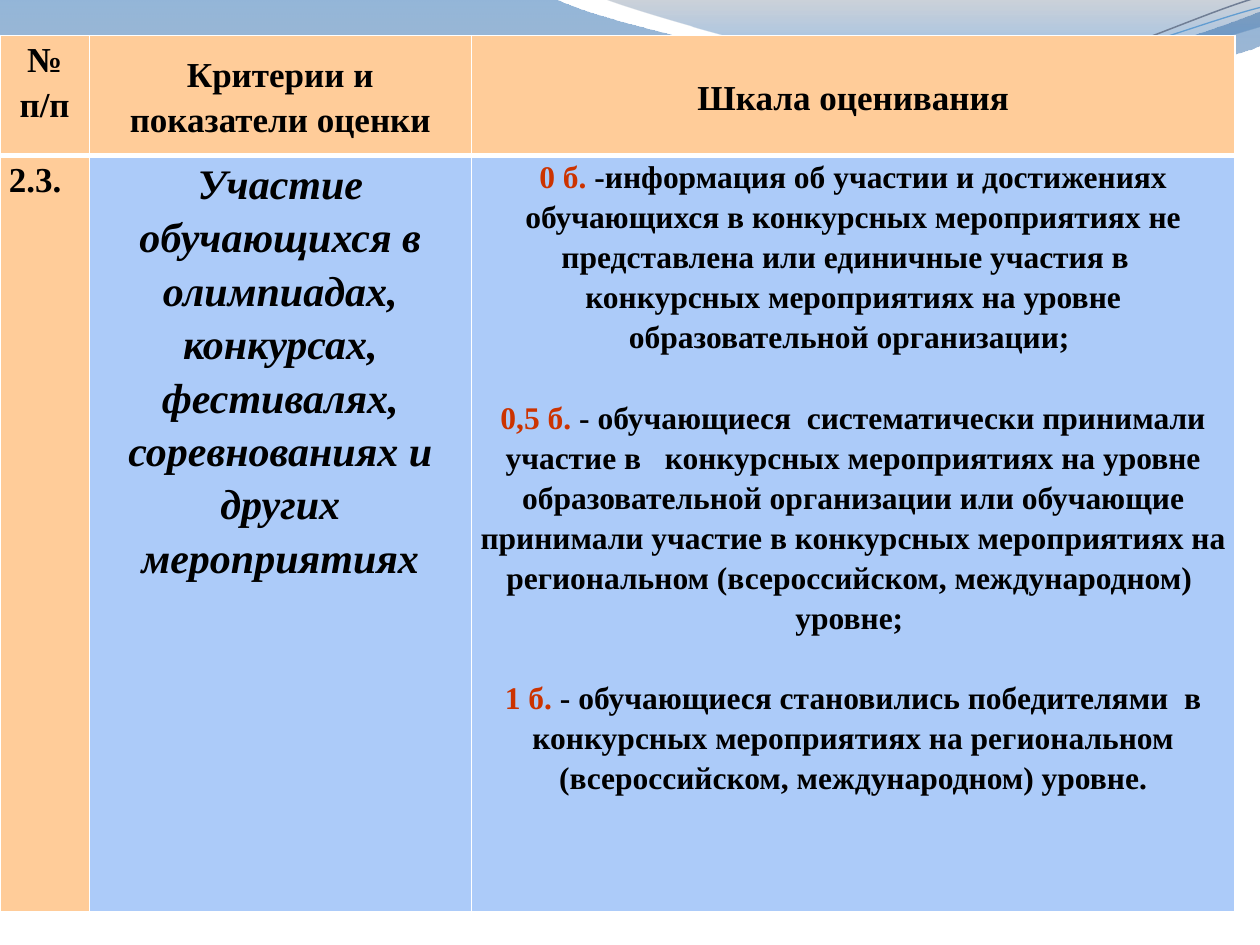
from math import cos, radians, sin

from lxml.etree import SubElement as Sub
from pptx import Presentation
from pptx.dml.color import RGBColor as Rgb
from pptx.enum.text import MSO_ANCHOR as Anchor, PP_ALIGN as Align
from pptx.oxml.ns import qn
from pptx.util import Cm, Pt

COLORS = {
    "white": "FFFFFF", "black": "000000", "red": "CC3300",
    "peach": "FFCC99", "sky": "ACCBF9",
    "navy": "125EAA", "steel": "697FA4", "slate": "596982",
    "azure": "0670DA", "gray": "707E95", "blue": "629DD1",
}
FONT = "Times New Roman"
UNIT = 1000  # path steps per inch
TILT = 357.3


def turn(dots, mid, angle):
    c, s = cos(radians(angle)), sin(radians(angle))
    return [(mid[0] + (x - mid[0]) * c - (y - mid[1]) * s,
             mid[1] + (x - mid[0]) * s + (y - mid[1]) * c) for x, y in dots]


class Deck:
    def __init__(self):
        self.show = Presentation()
        self.show.slide_width, self.show.slide_height = Cm(25.4), Cm(19.05)
        self.slide = self.show.slides.add_slide(self.show.slide_layouts[6])

    def color(self, name):
        return Rgb.from_string(COLORS[name])

    def outline(self, parts, close):
        """Each part is a list of points: one for a line, three for a curve."""
        dots = [(x * UNIT, y * UNIT) for part in parts for x, y in part]
        pen = self.slide.shapes.build_freeform(*dots[0], scale=Cm(2.54) / UNIT)
        pen.add_line_segments(dots[1:], close=close)
        shape = pen.convert_to_shape()
        shape.shadow.inherit = False
        # Join the lines of each curve into one cubic segment
        lines = shape._element.spPr.iter(qn("a:lnTo"))
        lines = iter(list(lines))
        for part in parts[1:]:
            group = [next(lines) for _ in part]
            if len(group) == 3:
                group[0].tag = qn("a:cubicBezTo")
                for line in group[1:]:
                    group[0].append(line[0])
                    line.getparent().remove(line)
        return shape

    def wave(self, parts, stops):
        shape = self.outline(parts, True)
        shape.line.fill.background()
        shape.fill.gradient()
        shape.fill.gradient_angle = 270
        for stop, (pos, name, alpha) in zip(shape.fill.gradient_stops, stops):
            stop.position = pos
            stop.color.rgb = self.color(name)
        marks = shape._element.spPr.iter(qn("a:srgbClr"))
        for mark, (_, _, alpha) in zip(marks, stops):
            Sub(mark, qn("a:alpha"), val=str(alpha * 1000))

    def curve(self, parts, mid, name, width):
        shape = self.outline([turn(part, mid, 360 - TILT) for part in parts], False)
        shape.rotation = TILT
        shape.fill.background()
        shape.line.color.rgb = self.color(name)
        shape.line.width = Pt(width)

    def table(self, left, top, cols, rows):
        frame = self.slide.shapes.add_table(
            len(rows), len(cols), Cm(left), Cm(top), Cm(sum(cols)), Cm(sum(rows)))
        grid = frame.table
        for col, width in zip(grid.columns, cols):
            col.width = Cm(width)
        for row, height in zip(grid.rows, rows):
            row.height = Cm(height)
        return grid

    def cell(self, cell, paras, fill, edges, size=20, align=Align.CENTER,
             anchor=Anchor.TOP, italic=False, gap=0):
        """Each paragraph is a list of (text, color) runs."""
        cell.margin_left = cell.margin_right = Cm(0.18)
        cell.margin_top = cell.margin_bottom = 0
        cell.vertical_anchor = anchor
        cell.fill.solid()
        cell.fill.fore_color.rgb = self.color(fill)
        self.edge(cell, edges)
        frame = cell.text_frame
        for i, runs in enumerate(paras):
            para = frame.add_paragraph() if i else frame.paragraphs[0]
            para.alignment, para.line_spacing = align, 1.15
            if i and gap:
                para.space_before = Pt(gap)
            font = para.font
            font.name, font.size = FONT, Pt(size)
            font.bold, font.italic = True, italic
            for text, name in runs:
                run = para.add_run()
                run.text = text
                run.font.color.rgb = self.color(name)

    def edge(self, cell, widths):
        props = cell._tc.get_or_add_tcPr()
        for i, (side, width) in enumerate(zip("LRTB", widths)):
            line = Sub(props, qn("a:ln" + side), w=str(Pt(width)))
            fill = Sub(line, qn("a:solidFill"))
            Sub(fill, qn("a:srgbClr"), val=COLORS["white"])
            props.insert(i, line)


def main():
    deck = Deck()

    # Waves along the top
    deck.wave([[(0, -0.01)], [(4.4, -0.01)],
               [(4.76, 0.17), (6.64, 0.63), (7.58, 0.63)],
               [(8.53, 0.63), (9.58, 0.26), (10, 0.09)], [(10.01, 0.36)],
               [(9.83, 0.44), (8.7, 0.76), (7.46, 0.75)],
               [(6.22, 0.75), (3.82, 0.28), (2.57, 0.34)],
               [(1.29, 0.35), (0.46, 0.83), (-0.01, 1.13)]],
              [(0, "navy", 45), (1, "steel", 55)])
    deck.wave([[(4.79, -0.01)],
               [(5.09, 0.11), (6.82, 0.62), (7.69, 0.65)],
               [(8.56, 0.69), (9.61, 0.32), (10, 0.21)], [(10, 0)]],
              [(0, "slate", 30), (0.8, "azure", 45)])

    # Thin curves
    deck.curve([[(0, 1.11)], [(0.48, 0.93), (1.58, 0.57), (2.77, 0.52)],
                [(3.95, 0.47), (5.93, 0.89), (7.13, 0.8)],
                [(8.33, 0.71), (9.38, 0.15), (9.98, -0.02)]],
               (4.99, 0.58), "gray", 0.85)
    deck.curve([[(0, 1.04)], [(0.47, 0.96), (1.64, 0.61), (2.83, 0.56)],
                [(4.03, 0.51), (5.97, 0.83), (7.17, 0.75)],
                [(8.36, 0.67), (9.41, 0.21), (10, 0.06)]],
               (5, 0.59), "blue", 0.75)

    # Table header
    grid = deck.table(0, 0.72, [1.8, 7.7, 15.4], [2.41, 15.24])
    heads = [["№", "п/п"], ["Критерии и показатели оценки"], ["Шкала оценивания"]]
    for i, lines in enumerate(heads):
        deck.cell(grid.cell(0, i), [[(line, "black")] for line in lines],
                  "peach", (1, 1, 1, 3),
                  anchor=Anchor.MIDDLE if i else Anchor.TOP)

    # Criterion and its scale
    body = (1, 1, 3, 1)
    deck.cell(grid.cell(1, 0), [[("2.3.", "black")]], "peach", body,
              align=Align.LEFT)
    deck.cell(grid.cell(1, 1), [[(
        "Участие обучающихся в олимпиадах, конкурсах, фестивалях, "
        "соревнованиях и других мероприятиях", "black")]],
        "sky", body, size=24, italic=True)
    scale = [
        ("0 б.", " -информация об участии и достижениях обучающихся в "
         "конкурсных мероприятиях не представлена или единичные участия в   "
         "конкурсных мероприятиях на уровне образовательной организации; "),
        ("0,5 б.", " - обучающиеся  систематически принимали участие в   "
         "конкурсных мероприятиях на уровне образовательной организации или "
         "обучающие принимали участие в конкурсных мероприятиях на "
         "региональном (всероссийском, международном)  уровне; "),
        ("1 б.", " - обучающиеся становились победителями  в конкурсных "
         "мероприятиях на региональном (всероссийском, международном) уровне."),
    ]
    deck.cell(grid.cell(1, 2),
              [[(mark, "red"), (text, "black")] for mark, text in scale],
              "sky", body, size=18, gap=22.9)

    deck.show.save("out.pptx")


if __name__ == "__main__":
    main()
